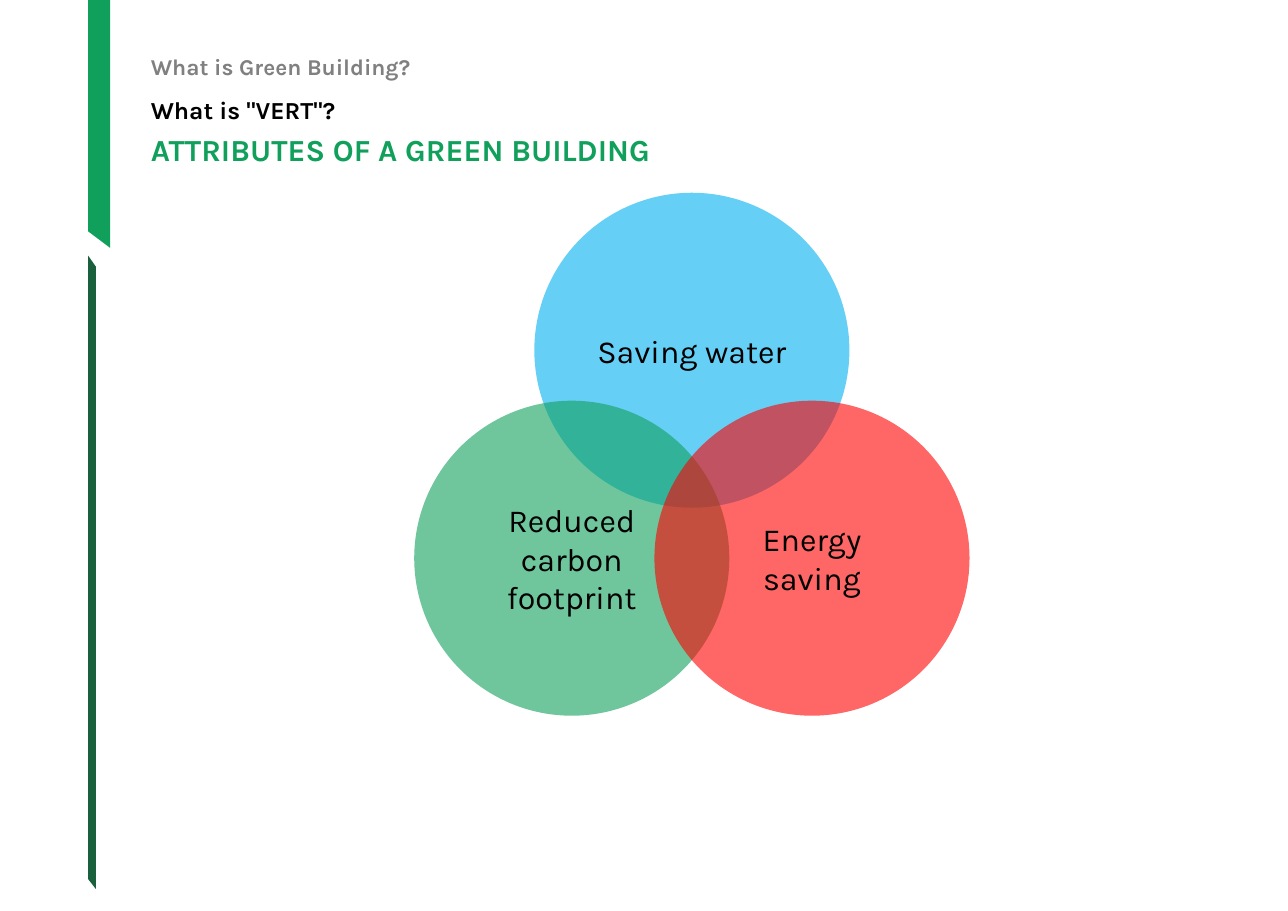
from math import sqrt

from lxml.etree import SubElement
from pptx import Presentation
from pptx.dml.color import RGBColor
from pptx.enum.shapes import MSO_SHAPE
from pptx.enum.text import MSO_ANCHOR, MSO_AUTO_SIZE, PP_ALIGN
from pptx.oxml.ns import qn
from pptx.util import Inches, Pt

COLORS = {
    "green": "10A05C", "dark_green": "1B603D", "grey": "808080",
    "black": "000000", "water": "00B0F0", "energy": "FF0000",
}
FONT = "Karla"
TWO_CONTENT_LAYOUT = 3
CIRCLE_ALPHA = 60000
CIRCLE_SIZE = 2.86
CENTER_DISTANCE = 2.18


def rgb(name):
    return RGBColor.from_string(COLORS[name])


def set_all(target, values):
    for name, value in values.items():
        setattr(target, name, value)


def write_text(shape, text, color, frame_format, para_format, font_format):
    frame = shape.text_frame
    set_all(frame, {"word_wrap": True, "auto_size": MSO_AUTO_SIZE.NONE, **frame_format})
    para = frame.paragraphs[0]
    set_all(para, para_format)
    span = para.add_run()
    span.text = text
    set_all(span.font, {"name": FONT, **font_format})
    span.font.color.rgb = rgb(color)
    return para


def add_bar(page, box, color, top_slope, bottom_slope):
    """Vertical bar whose ends slope down to the right."""
    left, top, width, height = box
    right, bottom = left + width, top + height
    corners = [(left, top), (right, top + top_slope),
               (right, bottom), (left, bottom - bottom_slope)]
    points = [(Inches(x), Inches(y)) for x, y in corners]
    builder = page.shapes.build_freeform(*points[0])
    builder.add_line_segments(points[1:], close=True)
    bar = builder.convert_to_shape()
    bar.shadow.inherit = False
    bar.fill.solid()
    bar.fill.fore_color.rgb = rgb(color)
    bar.line.fill.background()


def fill_heading(holder, box, text, color, size, line_spacing):
    set_all(holder, dict(zip(("left", "top", "width", "height"), map(Inches, box))))
    frame_format = {
        "vertical_anchor": MSO_ANCHOR.TOP,
        "margin_left": Inches(0.11), "margin_right": Inches(0.11),
        "margin_top": Inches(0.06), "margin_bottom": Inches(0.06),
    }
    para_format = {"alignment": PP_ALIGN.LEFT, "line_spacing": line_spacing,
                   "space_before": Pt(1)}
    para = write_text(holder, text, color, frame_format, para_format,
                      {"size": Pt(size), "bold": True})
    # Plain line: no bullet and no hanging indent
    properties = para._p.get_or_add_pPr()
    properties.set("marL", "0")
    properties.set("indent", "0")
    SubElement(properties, qn("a:buNone"))


def add_headings(page, box):
    left, top, width = box
    title, first, second = page.placeholders
    headings = [
        (first, 0, 0.29, "What is Green Building?", "grey", 14.8, 0.6),
        (second, 0.34, 0.29, 'What is "VERT"?', "black", 16, 0.8),
        (title, 0.62, 0.5, "ATTRIBUTES OF A GREEN BUILDING", "green", 20, 1.0),
    ]
    for holder, offset, height, *content in headings:
        fill_heading(holder, (left, top + offset, width, height), *content)


def add_circle(group, left, top, text, color):
    circle = group.shapes.add_shape(
        MSO_SHAPE.OVAL, Inches(left), Inches(top), Inches(CIRCLE_SIZE), Inches(CIRCLE_SIZE))
    circle.shadow.inherit = False
    circle.fill.solid()
    circle.fill.fore_color.rgb = rgb(color)
    shade = circle._element.spPr.find(qn("a:solidFill")).find(qn("a:srgbClr"))
    SubElement(shade, qn("a:alpha"), val=str(CIRCLE_ALPHA))
    circle.line.fill.background()
    frame_format = {"vertical_anchor": MSO_ANCHOR.MIDDLE,
                    "margin_left": Inches(0.12), "margin_right": Inches(0.12)}
    write_text(circle, text, "black", frame_format,
               {"alignment": PP_ALIGN.CENTER}, {"size": Pt(21)})


def add_venn(page, left, top):
    """Three circles centred on the corners of an equilateral triangle."""
    group = page.shapes.add_group_shape()
    drop = CENTER_DISTANCE * sqrt(3) / 2
    add_circle(group, left + CENTER_DISTANCE / 2, top, "Saving water", "water")
    add_circle(group, left, top + drop, "Reduced carbon footprint", "green")
    add_circle(group, left + CENTER_DISTANCE, top + drop, "Energy saving", "energy")


def main():
    deck = Presentation()
    set_all(deck, {"slide_width": Inches(11.69), "slide_height": Inches(8.27)})
    page = deck.slides.add_slide(deck.slide_layouts[TWO_CONTENT_LAYOUT])

    # Side bars
    add_bar(page, (0.8, 2.32, 0.07, 5.75), "dark_green", 0.1, 0.09)
    add_bar(page, (0.8, 0, 0.2, 2.25), "green", 0, 0.15)

    # Headings and diagram
    add_headings(page, (1.26, 0.51, 9.84))
    add_venn(page, 3.76, 1.75)

    deck.save("out.pptx")


if __name__ == "__main__":
    main()
